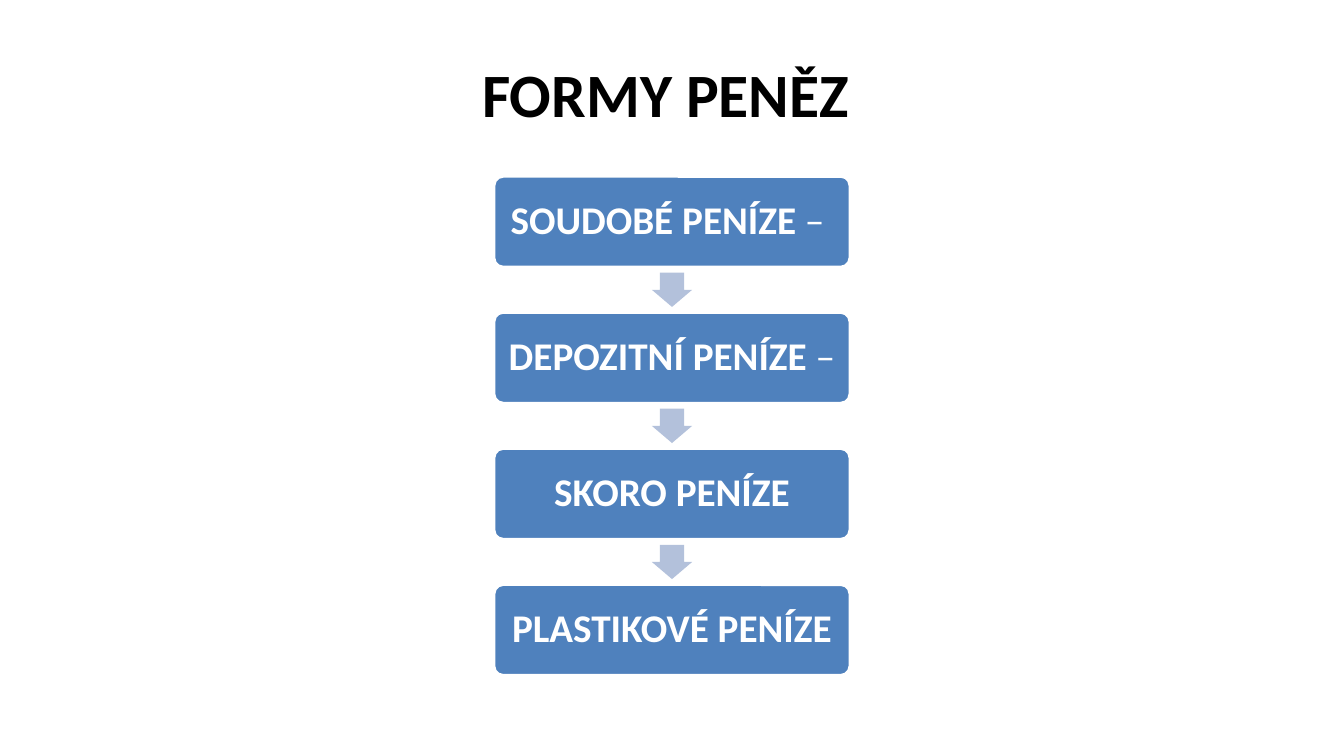
from dataclasses import dataclass

from pptx import Presentation
from pptx import util as u
from pptx.dml.color import RGBColor
from pptx.enum import shapes, text


@dataclass(frozen=True)
class Theme:
    font: str = "Calibri"
    title_size: u.Pt = u.Pt(44)
    box_size: u.Pt = u.Pt(28)
    border: u.Pt = u.Pt(2)
    black: RGBColor = RGBColor(0x00, 0x00, 0x00)
    white: RGBColor = RGBColor(0xFF, 0xFF, 0xFF)
    box: RGBColor = RGBColor(0x4F, 0x81, 0xBD)
    arrow: RGBColor = RGBColor(0xB3, 0xC1, 0xDB)


@dataclass(frozen=True)
class MoneyForm:
    name: str
    suffix: str = ""


THEME = Theme()
FORMS = [
    MoneyForm("SOUDOBÉ PENÍZE", " – "),
    MoneyForm("DEPOZITNÍ PENÍZE", " – "),
    MoneyForm("SKORO PENÍZE"),
    MoneyForm("PLASTIKOVÉ PENÍZE"),
]

# Flow geometry in inches
BOX_LEFT, BOX_TOP, BOX_W, BOX_H = 4.9, 1.75, 3.53, 0.9
STEP = 1.35
ARROW_W, ARROW_H = 0.34, 0.4
INSET = 0.12


def add_title(slide, title: str) -> None:
    sp = slide.shapes.title
    sp.left, sp.top = u.Inches(0.67), u.Inches(0.3)
    sp.width, sp.height = u.Inches(12), u.Inches(1.25)
    tf = sp.text_frame
    tf.text = title
    tf.vertical_anchor = text.MSO_ANCHOR.MIDDLE
    p = tf.paragraphs[0]
    p.alignment = text.PP_ALIGN.CENTER
    p.font.name, p.font.size, p.font.bold = THEME.font, THEME.title_size, True
    p.font.color.rgb = THEME.black


def add_box(slide, form: MoneyForm, top: float) -> None:
    sp = slide.shapes.add_shape(
        shapes.MSO_SHAPE.ROUNDED_RECTANGLE,
        u.Inches(BOX_LEFT), u.Inches(top), u.Inches(BOX_W), u.Inches(BOX_H))
    sp.adjustments[0] = 0.1
    sp.shadow.inherit = False
    sp.fill.solid()
    sp.fill.fore_color.rgb = THEME.box
    sp.line.color.rgb = THEME.white
    sp.line.width = THEME.border

    tf = sp.text_frame
    tf.word_wrap = True
    tf.vertical_anchor = text.MSO_ANCHOR.MIDDLE
    tf.margin_left = tf.margin_right = u.Inches(INSET)
    tf.margin_top = tf.margin_bottom = u.Inches(INSET)
    p = tf.paragraphs[0]
    p.alignment = text.PP_ALIGN.CENTER
    p.line_spacing = 0.9
    p.font.name, p.font.size = THEME.font, THEME.box_size
    p.font.color.rgb = THEME.white
    for words, bold in ((form.name, True), (form.suffix, False)):
        if words:
            r = p.add_run()
            r.text = words
            r.font.bold = bold


def add_arrow(slide, center_y: float) -> None:
    left = BOX_LEFT + (BOX_W - ARROW_W) / 2
    sp = slide.shapes.add_shape(
        shapes.MSO_SHAPE.RIGHT_ARROW,
        u.Inches(left), u.Inches(center_y - ARROW_H / 2),
        u.Inches(ARROW_W), u.Inches(ARROW_H))
    sp.rotation = 90
    sp.adjustments[0], sp.adjustments[1] = 0.6, 0.5
    sp.shadow.inherit = False
    sp.fill.solid()
    sp.fill.fore_color.rgb = THEME.arrow
    sp.line.fill.background()


def main() -> None:
    prs = Presentation()
    prs.slide_width, prs.slide_height = u.Inches(13.33), u.Inches(7.5)
    slide = prs.slides.add_slide(prs.slide_layouts.get_by_name("Title Only"))
    add_title(slide, "FORMY PENĚZ ")

    # Boxes, each preceded by an arrow centred in the gap above it
    for i, form in enumerate(FORMS):
        top = BOX_TOP + i * STEP
        if i:
            add_arrow(slide, top - (STEP - BOX_H) / 2)
        add_box(slide, form, top)

    prs.save("out.pptx")


if __name__ == "__main__":
    main()
